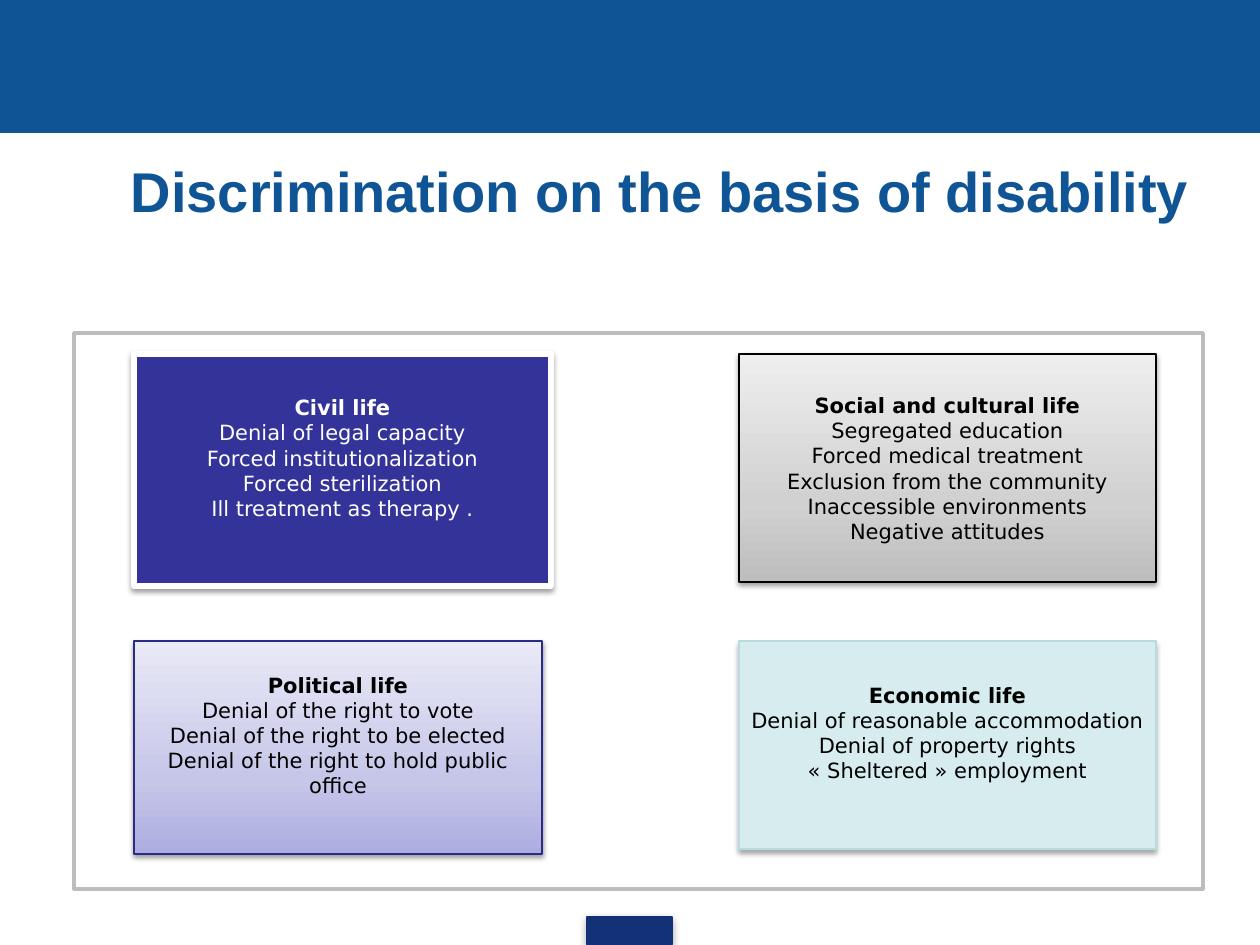
import copy
from dataclasses import dataclass

import pptx
import pptx.dml.color
import pptx.enum.shapes
import pptx.enum.text
import pptx.oxml
import pptx.oxml.ns
import pptx.util

PX = 914400 // 126  # EMU per pixel


@dataclass(frozen=True)
class Theme:
    blue: str = "0F5494"
    tab: str = "133176"
    white: str = "FFFFFF"
    black: str = "000000"
    frame: str = "BDBDBD"
    indigo: str = "333399"
    indigo_line: str = "2A2A89"
    aqua: str = "D6ECEE"
    aqua_line: str = "B6DCDF"
    lilac_fade: tuple = ("ADADE1", "C6C6E9", "E9E9F7")
    grey_fade: tuple = ("BDBDBD", "D1D1D1", "EEEEEE")
    title_font: str = "Arial"
    body_font: str = "DejaVu Sans"
    title_size: int = 32
    body_size: int = 12


T = Theme()


def rgb(color):
    return pptx.dml.color.RGBColor.from_string(color)


def px(*values):
    return [v * PX for v in values]


def set_gradient(sp, colors):
    """Fade upwards through three colours."""
    sp.fill.gradient()
    sp.fill.gradient_angle = 90
    stops = sp._element.spPr.find(".//" + pptx.oxml.ns.qn("a:gsLst"))
    stops.append(copy.deepcopy(stops[-1]))
    for stop, position, color in zip(sp.fill.gradient_stops, (0, 0.35, 1), colors):
        stop.position = position
        stop.color.rgb = rgb(color)


def add_shadow(sp, alpha, blur, distance):
    """Drop a black shadow straight down."""
    effects = sp._element.spPr.find(pptx.oxml.ns.qn("a:effectLst"))
    effects.append(pptx.oxml.parse_xml(
        f'<a:outerShdw {pptx.oxml.ns.nsdecls("a")} blurRad="{pptx.util.Pt(blur)}" '
        f'dist="{pptx.util.Pt(distance)}" dir="5400000" rotWithShape="0">'
        f'<a:srgbClr val="{T.black}"><a:alpha val="{alpha * 1000}"/></a:srgbClr>'
        "</a:outerShdw>"))


def add_rect(slide, box, fill, line, width=0.75, shadow=None):
    sp = slide.shapes.add_shape(pptx.enum.shapes.MSO_SHAPE.RECTANGLE, *px(*box))
    sp.shadow.inherit = False
    if isinstance(fill, tuple):
        set_gradient(sp, fill)
    else:
        sp.fill.solid()
        sp.fill.fore_color.rgb = rgb(fill)
    sp.line.color.rgb = rgb(line)
    sp.line.width = pptx.util.Pt(width)
    if shadow:
        add_shadow(sp, *shadow)
    return sp


def write_lines(sp, lines, font, size, color):
    """Centre the lines in the shape, the first one in bold."""
    tf = sp.text_frame
    tf.word_wrap = True
    tf.vertical_anchor = pptx.enum.text.MSO_ANCHOR.MIDDLE
    for i, line in enumerate(lines):
        p = tf.paragraphs[0] if i == 0 else tf.add_paragraph()
        p.alignment = pptx.enum.text.PP_ALIGN.CENTER
        r = p.add_run()
        r.text = line
        r.font.name = font
        r.font.size = pptx.util.Pt(size)
        r.font.bold = i == 0
        r.font.color.rgb = rgb(color)


def add_title(slide, text):
    sp = slide.shapes.add_textbox(*px(64, 115, 1144, 150))
    write_lines(sp, [text], T.title_font, T.title_size, T.blue)
    sp.text_frame.paragraphs[0]._p.get_or_add_pPr().set("marL", str(49 * PX))


def add_card(slide, box, fill, line, lines, color=T.black, width=0.75,
             shadow=(38, 3.1, 1.6), bottom=6):
    sp = add_rect(slide, box, fill, line, width, shadow)
    write_lines(sp, lines, T.body_font, T.body_size, color)
    sp.text_frame.margin_bottom = bottom * PX


def main():
    prs = pptx.Presentation()
    prs.slide_width, prs.slide_height = px(1260, 945)
    slide = prs.slides.add_slide(prs.slide_layouts[6])

    # Header band, footer tab and title
    add_rect(slide, (0, 0, 1260, 132), T.blue, T.blue)
    add_rect(slide, (587, 917, 85, 28), T.tab, T.tab, shadow=(35, 5, 1.8))
    add_title(slide, "Discrimination on the basis of disability")

    # Frame with the four areas of life
    add_rect(slide, (74, 333, 1129, 556), T.white, T.frame, 2)
    left, right, top, low = 134, 739, 354, 641
    add_card(slide, (left, top, 417, 232), T.indigo, T.white, [
        "Civil life",
        "Denial of legal capacity",
        "Forced institutionalization",
        "Forced sterilization",
        "Ill treatment as therapy .",
    ], color=T.white, width=3, bottom=31)
    add_card(slide, (left, low, 408, 213), T.lilac_fade, T.indigo_line, [
        "Political life",
        "Denial of the right to vote",
        "Denial of the right to be elected",
        "Denial of the right to hold public office",
    ], bottom=31)
    add_card(slide, (right, top, 417, 228), T.grey_fade, T.black, [
        "Social and cultural life",
        "Segregated education",
        "Forced medical treatment",
        "Exclusion from the community",
        "Inaccessible environments",
        "Negative attitudes",
    ])
    add_card(slide, (right, low, 417, 208), T.aqua, T.aqua_line, [
        "Economic life",
        "Denial of reasonable accommodation",
        "Denial of property rights",
        "« Sheltered » employment",
    ], shadow=(35, 3.1, 1.8), bottom=31)

    prs.save("out.pptx")


if __name__ == "__main__":
    main()
